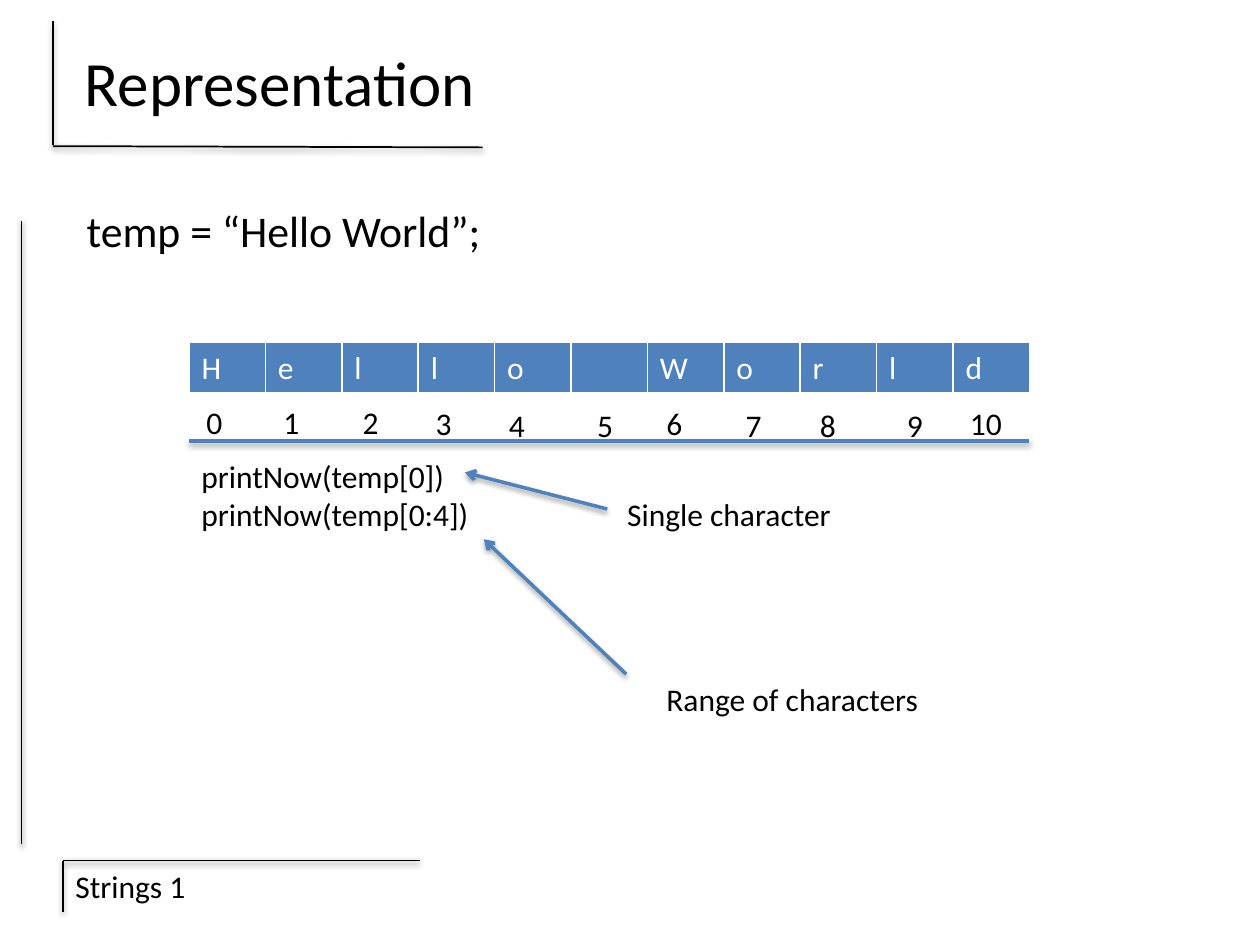
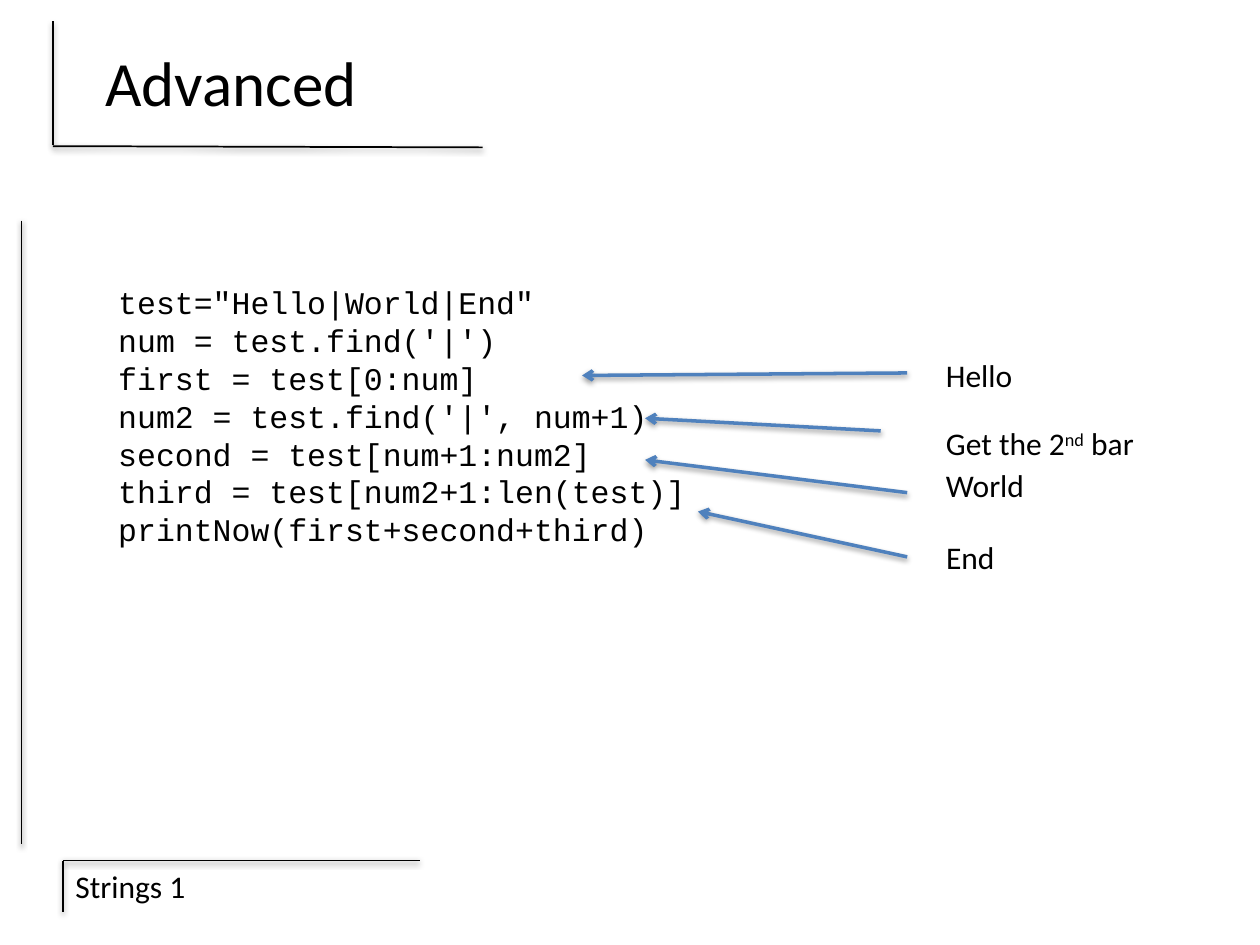
from lxml import etree
from pptx import Presentation
from pptx.dml.color import RGBColor
from pptx.enum.shapes import MSO_CONNECTOR
from pptx.enum.text import MSO_ANCHOR, MSO_AUTO_SIZE, PP_ALIGN
from pptx.oxml import parse_xml
from pptx.oxml.ns import qn
from pptx.util import Inches, Pt

STRAIGHT = MSO_CONNECTOR.STRAIGHT
MIDDLE = MSO_ANCHOR.MIDDLE
GROW = MSO_AUTO_SIZE.SHAPE_TO_FIT_TEXT
CENTER = PP_ALIGN.CENTER

BLACK = RGBColor(0, 0, 0)
WHITE = RGBColor(255, 255, 255)
BLUE = RGBColor(0x4F, 0x81, 0xBD)
SANS, MONO = "Calibri", "Courier New"
NS = 'xmlns:a="http://schemas.openxmlformats.org/drawingml/2006/main"'
SHADOW = (f'<a:effectLst {NS}><a:outerShdw blurRad="40000" dist="20000" '
          'dir="5400000" rotWithShape="0"><a:srgbClr val="000000">'
          '<a:alpha val="38000"/></a:srgbClr></a:outerShdw></a:effectLst>')

# Shared frame: rules as x1, y1, x2, y2
FOOTER = "Strings 1"
RULES = [
    (3.33, 6.83, 0.5, 6.83),
    (0.17, 1.75, 0.17, 6.7),
    (0.5, 6.83, 0.5, 7.24),
    (3.83, 1.17, 0.42, 1.16),
    (0.42, 0.17, 0.42, 1.15),
]

# Representation: the string, its index marks (left, top) and two calls
WORD = "Hello World"
MARKS = [(1.54, 3.15), (2.15, 3.15), (2.78, 3.15), (3.36, 3.16),
         (3.94, 3.17), (4.64, 3.17), (5.19, 3.16), (5.82, 3.17),
         (6.41, 3.17), (7.1, 3.17), (7.6, 3.16)]
CALLS = ["printNow(temp[0])", "printNow(temp[0:4])"]
KINDS = [
    ("Single character", (4.88, 3.88, 1.83, 0.4), (4.82, 4.04, 3.69, 3.75)),
    ("Range of characters", (5.19, 5.35, 2.22, 0.4), (4.97, 5.35, 3.84, 4.28)),
]

# Advanced: code, then each result with its box and arrow
CODE = [
    'test="Hello|World|End"',
    "num = test.find('|')",
    "first = test[0:num]",
    "num2 = test.find('|', num+1)",
    "second = test[num+1:num2]",
    "third = test[num2+1:len(test)]",
    "printNow(first+second+third)",
]
RESULTS = [
    ("Hello", (7.41, 2.78, 0.73, 0.4), (7.2, 2.96, 4.62, 2.98)),
    ("World", (7.41, 3.65, 0.83, 0.4), (7.2, 3.91, 5.12, 3.65)),
    (["Get the 2", "^nd", " bar"], (7.41, 3.32, 1.73, 0.4),
     (6.99, 3.42, 5.12, 3.32)),
    ("End", (7.41, 4.22, 0.59, 0.4), (7.2, 4.42, 5.54, 4.06)),
]


def add_run(para, text, size=18, font=SANS, color=BLACK):
    """Add one run; a leading ^ raises it."""
    run = para.add_run()
    run.text = text.lstrip("^")
    run.font.size, run.font.name = Pt(size), font
    run.font.color.rgb = color
    if text.startswith("^"):
        run.font._element.set("baseline", "30000")


def add_text(slide, box, lines, size=18, font=SANS, wrap=False):
    """Add a text box; each line is a string or a list of runs."""
    frame = slide.shapes.add_textbox(*map(Inches, box)).text_frame
    frame.word_wrap = wrap
    frame.auto_size = GROW
    for n, line in enumerate(lines):
        para = frame.add_paragraph() if n else frame.paragraphs[0]
        for text in [line] if isinstance(line, str) else line:
            add_run(para, text, size, font)
    return frame


def add_line(slide, ends, color=BLACK, width=1, arrow=False):
    line = slide.shapes.add_connector(STRAIGHT, *map(Inches, ends))
    line.line.color.rgb = color
    line.line.width = Pt(width)
    if arrow:
        tip = etree.SubElement(line.line._get_or_add_ln(), qn("a:tailEnd"))
        tip.set("type", "arrow")
    line._element.spPr.append(parse_xml(SHADOW))


def add_notes(slide, notes):
    for text, box, ends in notes:
        add_text(slide, box, [text])
        add_line(slide, ends, BLUE, 2, arrow=True)


def add_frame(deck, title, width):
    """Start a slide with its rules, footer and title."""
    slide = deck.slides.add_slide(deck.slide_layouts[6])
    for ends in RULES:
        add_line(slide, ends)
    add_text(slide, (0.5, 6.83, 2.42, 0.4), [FOOTER], wrap=True)
    frame = add_text(slide, (0.5, 0.17, width, 0.95), [title], 36, wrap=True)
    frame.auto_size = MSO_AUTO_SIZE.NONE
    frame.vertical_anchor = MIDDLE
    frame.paragraphs[0].alignment = CENTER
    return slide


def add_cells(slide, word):
    """Lay out the word one letter to a cell, with white borders."""
    box = map(Inches, (1.5, 2.72, 6.67, 0.41))
    table = slide.shapes.add_table(1, len(word), *box).table
    for cell, char in zip(table.rows[0].cells, word):
        if char.strip():
            add_run(cell.text_frame.paragraphs[0], char, color=WHITE)
        props = cell._tc.get_or_add_tcPr()
        for side, width in (("L", 1), ("R", 1), ("T", 1), ("B", 3)):
            props.append(parse_xml(
                f'<a:ln{side} {NS} w="{Pt(width)}"><a:solidFill>'
                f'<a:srgbClr val="{WHITE}"/></a:solidFill></a:ln{side}>'))
        cell.fill.solid()
        cell.fill.fore_color.rgb = BLUE


def main():
    deck = Presentation()
    deck.slide_width, deck.slide_height = Inches(10), Inches(7.5)

    # Representation
    slide = add_frame(deck, "Representation", 3.44)
    add_text(slide, (0.59, 1.57, 3.36, 0.52), [f"temp = “{WORD}”;"], 25)
    add_cells(slide, WORD)
    for n, (left, top) in enumerate(MARKS):
        add_text(slide, (left, top, 0.33 if n < 10 else 0.46, 0.4), [str(n)])
    add_line(slide, (1.5, 3.5, 8.17, 3.5), BLUE, 2)
    add_text(slide, (1.5, 3.58, 2.34, 0.71), CALLS)
    add_notes(slide, KINDS)

    # Advanced
    slide = add_frame(deck, "Advanced", 2.67)
    add_text(slide, (0.84, 2.2, 5, 2.22), CODE, font=MONO, wrap=True)
    add_notes(slide, RESULTS)

    deck.save("out.pptx")


if __name__ == "__main__":
    main()
